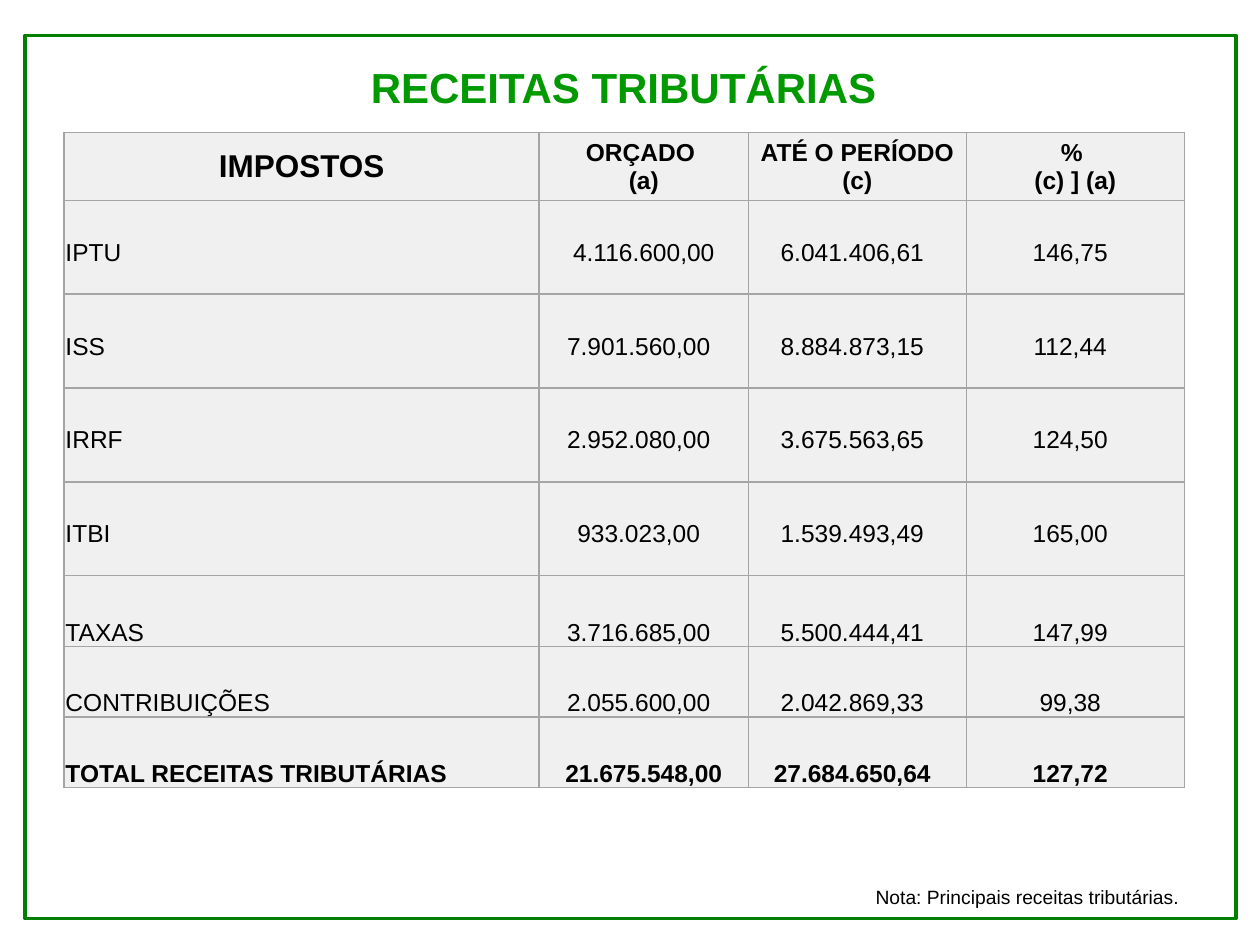
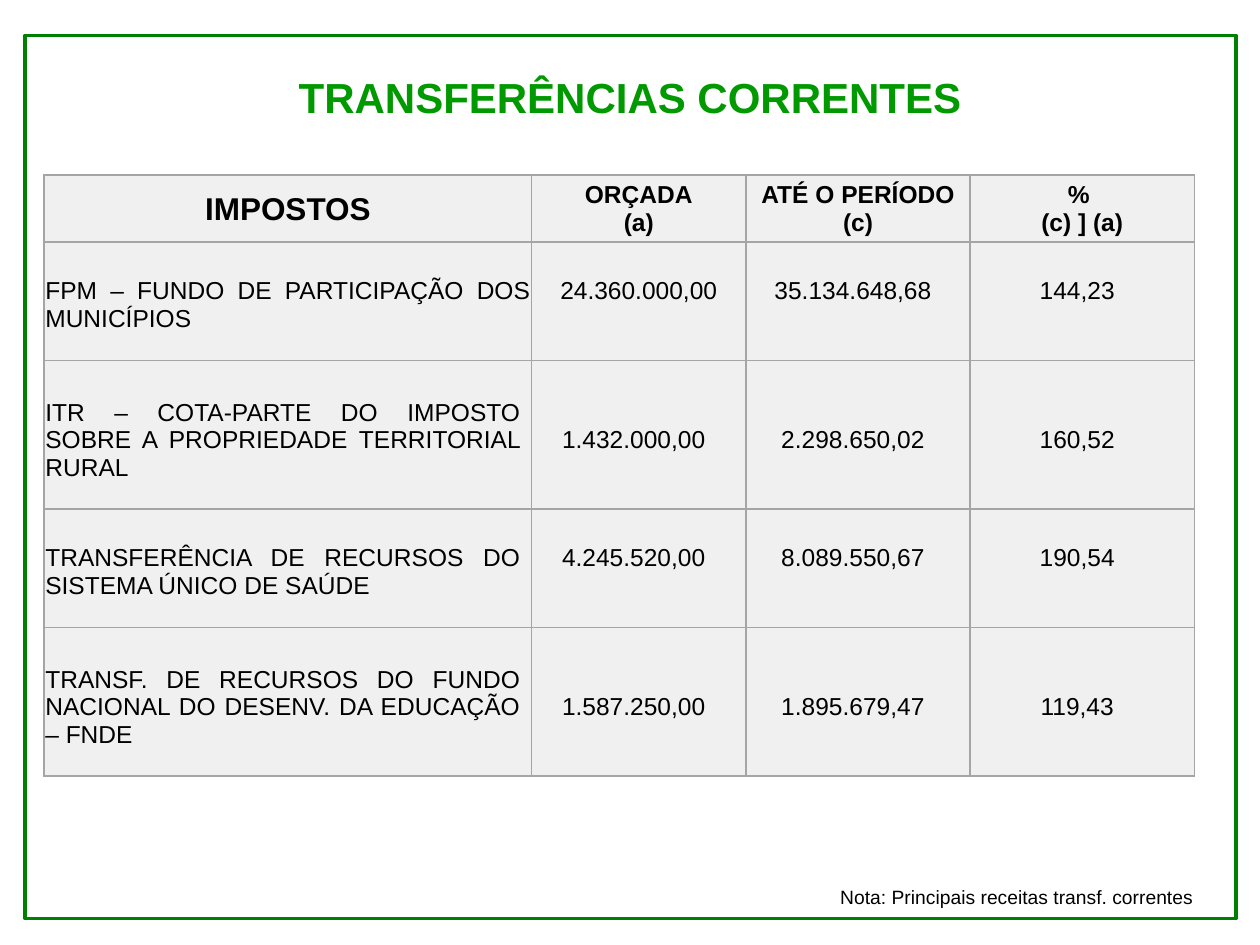
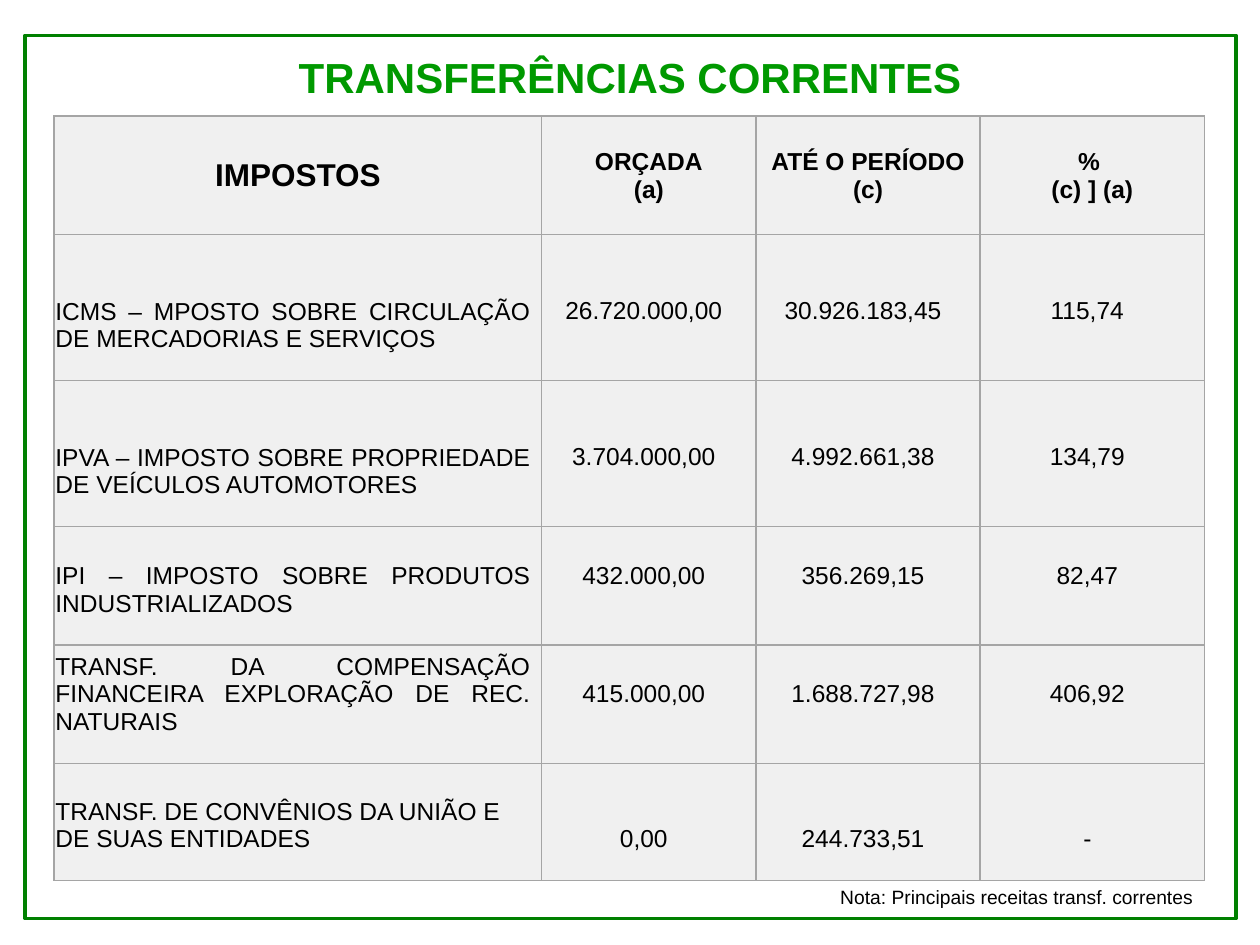
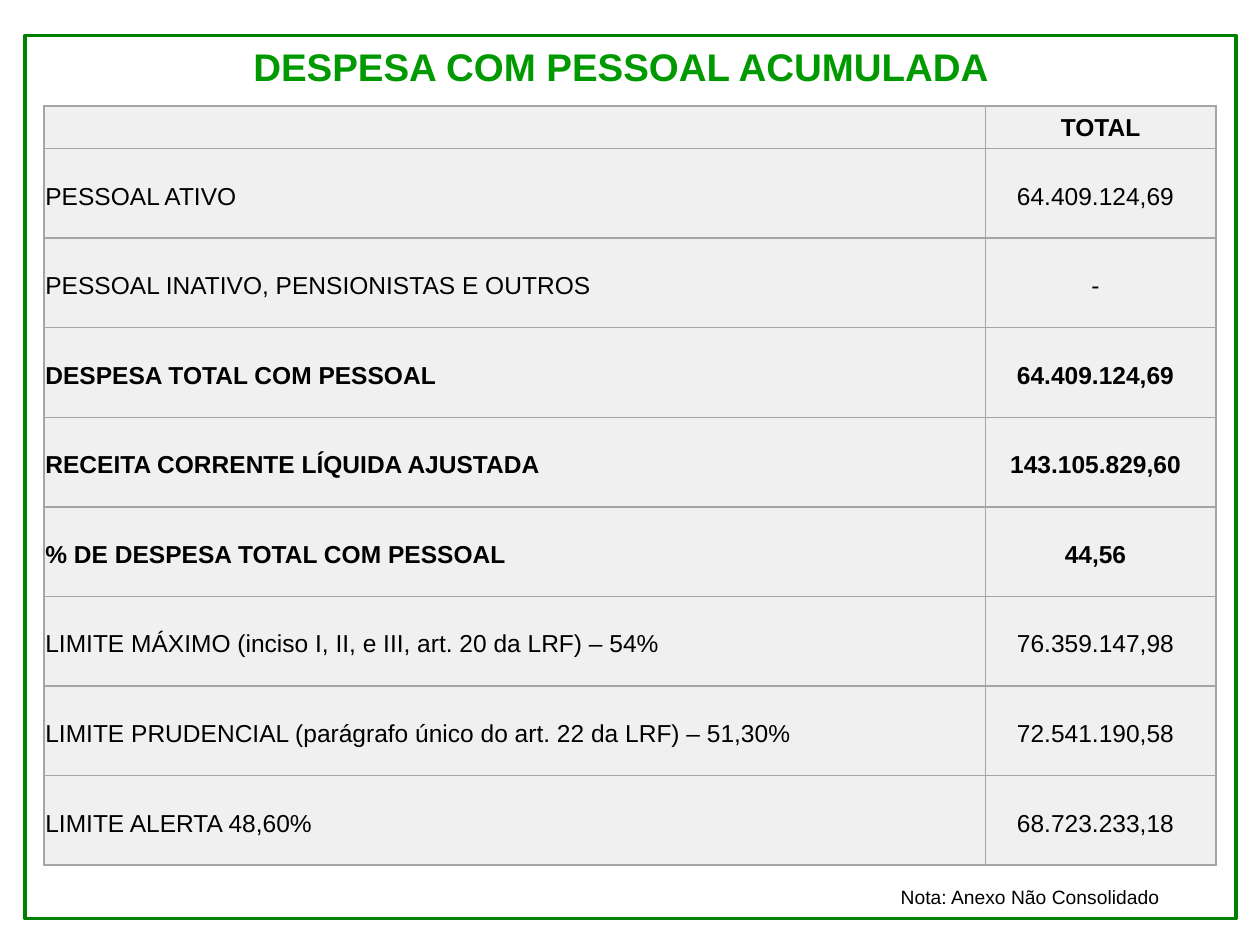
"""Build four framed slides of municipal revenue and staff spending tables."""
import pptx
import pptx.dml.color
import pptx.enum.shapes
import pptx.enum.text
import pptx.oxml
import pptx.oxml.ns
import pptx.util

COLORS = {"frame": "008000", "title": "009900", "text": "000000", "cell": "F0F0F0", "border": "A5A5A5"}
FONT = "Arial"
ALIGN = pptx.enum.text.PP_ALIGN
ANCHOR = pptx.enum.text.MSO_ANCHOR

deck = pptx.Presentation()
deck.slide_width = pptx.util.Inches(10)
deck.slide_height = pptx.util.Inches(7.5)
UNIT = deck.slide_width / 100
LINE = 2.2
THIN = 0.1
WIDE = 0.9


def grid(*lengths):
    """Turn lengths in grid units into slide lengths."""
    return [pptx.util.Emu(round(length * UNIT)) for length in lengths]


def write(frame, text, size, color, bold=False, align=ALIGN.LEFT):
    """Fill a text frame and format every run in it."""
    frame.text = text
    for para in frame.paragraphs:
        para.alignment = align
        for span in para.runs:
            span.font.name = FONT
            span.font.size = pptx.util.Pt(size)
            span.font.bold = bold
            span.font.color.rgb = pptx.dml.color.RGBColor.from_string(COLORS[color])


TRANSFER_HEADER = ["IMPOSTOS", "ORÇADA\n(a)", "ATÉ O PERÍODO (c)", "% \n(c) ] (a)"]
TRANSFER_COLUMNS = [38.7, 17, 17.8, 17.8]
TRANSFER_NOTE = "Nota: Principais receitas transf. correntes"

# Each row holds: height, blank lines under the label, blank lines under the values, cells.
pages = [
    {
        "title": "RECEITAS TRIBUTÁRIAS ", "title_at": (9.4, 4.4, 81.1, 5), "title_size": 24,
        "note": "Nota: Principais receitas tributárias.", "note_at": (68.5, 69.8, 31.5, 2.9),
        "table_at": (5.1, 10.5), "columns": [37.7, 16.6, 17.3, 17.3], "header_height": 5.4,
        "header": ["IMPOSTOS", "ORÇADO \n(a)", "ATÉ O PERÍODO (c)", "% \n(c) ] (a)"],
        "rows": [
            (7.45, 1, 1, ["IPTU", "4.116.600,00", "6.041.406,61", "146,75"]),
            (7.45, 1, 1, ["ISS", "7.901.560,00", "8.884.873,15", "112,44"]),
            (7.45, 1, 1, ["IRRF", "2.952.080,00", "3.675.563,65", "124,50"]),
            (7.45, 1, 1, ["ITBI", "933.023,00", "1.539.493,49", "165,00"]),
            (5.6, 0, 0, ["TAXAS", "3.716.685,00", "5.500.444,41", "147,99"]),
            (5.6, 0, 0, ["CONTRIBUIÇÕES", "2.055.600,00", "2.042.869,33", "99,38"]),
            (5.6, 0, 0, ["TOTAL RECEITAS TRIBUTÁRIAS", "21.675.548,00", "27.684.650,64", "127,72"]),
        ],
        "bold": {7}, "left": {7}, "full_width": {(1, 0), (1, 1), (7, 1)},
    },
    {
        "title": "TRANSFERÊNCIAS CORRENTES", "title_at": (22.4, 5.2, 55.2, 5), "title_size": 24,
        "note": TRANSFER_NOTE, "note_at": (65.7, 69.8, 31.5, 2.9),
        "table_at": (3.5, 13.9), "columns": TRANSFER_COLUMNS, "header_height": 5.3,
        "header": TRANSFER_HEADER,
        "rows": [
            (9.4, 1, 2, ["FPM – FUNDO DE PARTICIPAÇÃO DOS MUNICÍPIOS",
                         "24.360.000,00", "35.134.648,68", "144,23"]),
            (11.8, 1, 2, ["ITR – COTA-PARTE DO IMPOSTO SOBRE A PROPRIEDADE TERRITORIAL RURAL",
                          "1.432.000,00", "2.298.650,02", "160,52"]),
            (9.4, 1, 2, ["TRANSFERÊNCIA DE RECURSOS DO SISTEMA ÚNICO DE SAÚDE",
                         "4.245.520,00", "8.089.550,67", "190,54"]),
            (11.8, 1, 2, ["TRANSF. DE RECURSOS DO FUNDO NACIONAL DO DESENV. DA EDUCAÇÃO – FNDE",
                          "1.587.250,00", "1.895.679,47", "119,43"]),
        ],
        "bold": set(), "left": set(), "full_width": {(1, 0), (1, 1)},
    },
    {
        "title": "TRANSFERÊNCIAS CORRENTES", "title_at": (22.4, 3.6, 55.2, 5), "title_size": 24,
        "note": TRANSFER_NOTE, "note_at": (65.7, 69.8, 31.5, 2.9),
        "table_at": (4.3, 9.2), "columns": TRANSFER_COLUMNS, "header_height": 9.4,
        "header": TRANSFER_HEADER,
        "rows": [
            (11.6, 1, 2, ["ICMS – MPOSTO SOBRE CIRCULAÇÃO DE MERCADORIAS E SERVIÇOS",
                          "26.720.000,00", "30.926.183,45", "115,74"]),
            (11.6, 1, 2, ["IPVA – IMPOSTO SOBRE PROPRIEDADE DE VEÍCULOS AUTOMOTORES",
                          "3.704.000,00", "4.992.661,38", "134,79"]),
            (9.4, 1, 2, ["IPI – IMPOSTO SOBRE PRODUTOS INDUSTRIALIZADOS",
                         "432.000,00", "356.269,15", "82,47"]),
            (9.4, 1, 2, ["TRANSF. DA COMPENSAÇÃO FINANCEIRA EXPLORAÇÃO DE REC. NATURAIS",
                         "415.000,00", "1.688.727,98", "406,92"]),
            (9.3, 1, 1, ["TRANSF. DE CONVÊNIOS DA UNIÃO E DE SUAS ENTIDADES",
                         "0,00", "244.733,51", "-"]),
        ],
        "bold": set(), "left": {5}, "full_width": set(),
    },
    {
        "title": "DESPESA COM PESSOAL ACUMULADA ", "title_at": (9.1, 0, 81.1, 7.7), "title_size": 22,
        "title_inset": 3.4,
        "note": "Nota: Anexo Não Consolidado", "note_at": (70.5, 69.8, 26, 2.9),
        "table_at": (3.5, 8.4), "columns": [74.7, 18.3], "header_height": 3.4,
        "header": ["", "TOTAL"],
        "rows": [(7.11, 1, 1, cells) for cells in [
            ["PESSOAL ATIVO", "64.409.124,69"],
            ["PESSOAL INATIVO, PENSIONISTAS E OUTROS", "-"],
            ["DESPESA TOTAL COM PESSOAL", "64.409.124,69"],
            ["RECEITA CORRENTE LÍQUIDA AJUSTADA", "143.105.829,60"],
            ["% DE DESPESA TOTAL COM PESSOAL", "44,56"],
            ["LIMITE MÁXIMO (inciso I, II, e III, art. 20 da LRF) – 54%", "76.359.147,98"],
            ["LIMITE PRUDENCIAL (parágrafo único do art. 22 da LRF) – 51,30%", "72.541.190,58"],
            ["LIMITE ALERTA 48,60%", "68.723.233,18"],
        ]],
        "bold": {3, 4, 5}, "left": set(), "full_width": set(),
    },
]

for content in pages:
    page = deck.slides.add_slide(deck.slide_layouts[6])

    border = page.shapes.add_shape(pptx.enum.shapes.MSO_SHAPE.RECTANGLE, *grid(2, 2.8, 96.1, 70.1))
    border.shadow.inherit = False
    border.fill.background()
    border.line.color.rgb = pptx.dml.color.RGBColor.from_string(COLORS["frame"])
    border.line.width = pptx.util.Pt(2)

    title = page.shapes.add_textbox(*grid(*content["title_at"])).text_frame
    title.word_wrap = content["title_at"][2] > 60
    title.margin_top = grid(content.get("title_inset", 0.5))[0]
    write(title, content["title"], content["title_size"], "title", True, ALIGN.CENTER)

    rows = [(content["header_height"], 0, 0, content["header"])] + content["rows"]
    heights = [row[0] for row in rows]
    size = (sum(content["columns"]), sum(heights))
    table = page.shapes.add_table(len(rows), len(content["columns"]),
                                  *grid(*content["table_at"], *size)).table
    table.first_row = False
    table.horz_banding = False
    for column, width in zip(table.columns, grid(*content["columns"])):
        column.width = width
    for line, height in zip(table.rows, grid(*heights)):
        line.height = height

    for r, (height, label_gap, value_gap, texts) in enumerate(rows):
        for c, text in enumerate(texts):
            cell = table.cell(r, c)
            tight = r == 0 or (r, c) in content["full_width"]
            gap = LINE * (value_gap if c else label_gap)
            cell.margin_left, cell.margin_top, cell.margin_right, cell.margin_bottom = grid(
                THIN, THIN, THIN if tight else WIDE, gap)
            cell.vertical_anchor = ANCHOR.BOTTOM if r else ANCHOR.MIDDLE
            align = ALIGN.CENTER
            if r and c == 0:
                align = ALIGN.LEFT if r in content["left"] else ALIGN.JUSTIFY
            points = 18 if text == "IMPOSTOS" else 14
            write(cell.text_frame, text, points, "text", r == 0 or r in content["bold"], align)
            props = cell._tc.get_or_add_tcPr()
            for side in ("lnL", "lnR", "lnT", "lnB"):
                props.append(pptx.oxml.parse_xml(
                    f'<a:{side} {pptx.oxml.ns.nsdecls("a")} w="12700"><a:solidFill>'
                    f'<a:srgbClr val="{COLORS["border"]}"/></a:solidFill></a:{side}>'))
            cell.fill.solid()
            cell.fill.fore_color.rgb = pptx.dml.color.RGBColor.from_string(COLORS["cell"])

    note = page.shapes.add_textbox(*grid(*content["note_at"])).text_frame
    note.word_wrap = True
    write(note, content["note"], 11, "text")

deck.save("out.pptx")
